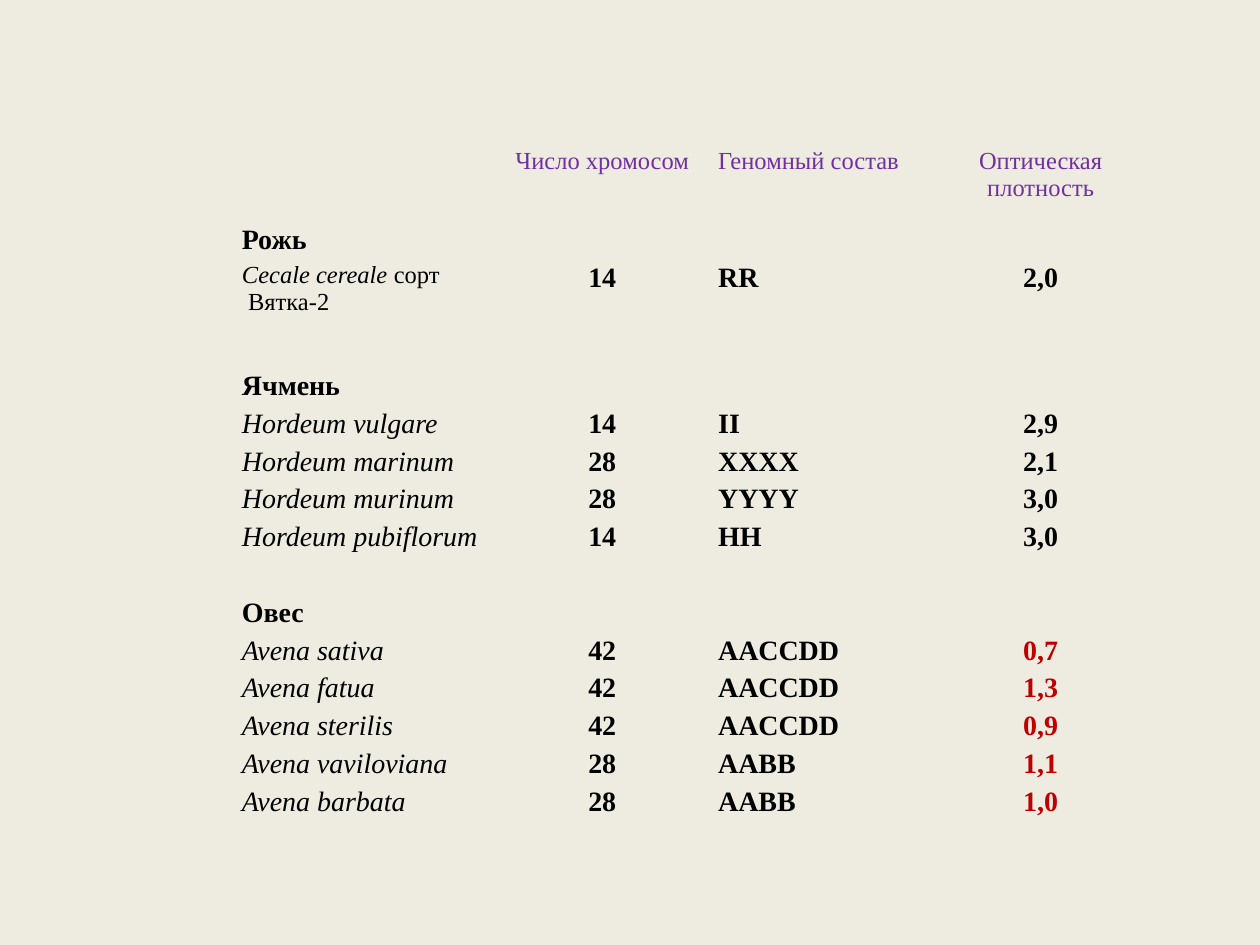
from dataclasses import dataclass
from typing import NamedTuple

from lxml import etree
from pptx import Presentation
from pptx.dml.color import RGBColor
from pptx.enum.text import PP_ALIGN
from pptx.oxml.ns import qn
from pptx.util import Inches, Pt

LEFT, CENTER, JUSTIFY = PP_ALIGN.LEFT, PP_ALIGN.CENTER, PP_ALIGN.JUSTIFY
NO_STYLE = "{2D5ABB26-0587-4C30-8999-92F81FD0307C}"


@dataclass(frozen=True)
class Theme:
    font: str = "Times New Roman"
    background: str = "EEECE1"
    heading: str = "7030A0"
    text: str = "000000"
    low_density: str = "C00000"
    small: int = 14
    body: int = 16


class Span(NamedTuple):
    text: str
    size: int
    color: str
    bold: bool = False
    italic: bool = False


class Species(NamedTuple):
    name: str
    chromosomes: str
    genome: str
    density: str


THEME = Theme()
SLIDE_WIDTH, SLIDE_HEIGHT = 10, 7.5
TABLE_LEFT, TABLE_TOP = 1.87, 1.17
COLUMN_WIDTHS = (2.04, 1.74, 1.74, 1.74)
COLUMN_ALIGNS = (JUSTIFY, CENTER, LEFT, CENTER)
ROW_HEIGHT = 0.3
TALL_ROW = 0.61
GAP_ROW = 0.25
SIDE_INSET = 0.05

HEADINGS = ("", "Число хромосом", "Геномный состав", "Оптическая плотность")
RYE = Species("", "14", "RR", "2,0")
BARLEY = (
    Species("Hordeum vulgare", "14", "II", "2,9"),
    Species("Hordeum marinum", "28", "XXXX", "2,1"),
    Species("Hordeum murinum", "28", "YYYY", "3,0"),
    Species("Hordeum pubiflorum", "14", "HH", "3,0"),
)
OATS = (
    Species("Avena sativa", "42", "AACCDD", "0,7"),
    Species("Avena fatua", "42", "AACCDD", "1,3"),
    Species("Avena sterilis", "42", "AACCDD", "0,9"),
    Species("Avena vaviloviana", "28", "AABB", "1,1"),
    Species("Avena barbata", "28", "AABB", "1,0"),
)

Lines = list[list[Span]]


class Row(NamedTuple):
    cells: list[Lines]
    height: float = ROW_HEIGHT


def heading_row() -> Row:
    cells = [[[Span(text, THEME.small, THEME.heading)]] if text else []
             for text in HEADINGS]
    return Row(cells, TALL_ROW)


def group_row(name: str) -> Row:
    return Row([[[Span(name, THEME.body, THEME.text, bold=True)]], [], [], []])


def empty_row(height: float = ROW_HEIGHT) -> Row:
    return Row([[], [], [], []], height)


def value_cells(species: Species, density_color: str) -> list[Lines]:
    values = ((species.chromosomes, THEME.text), (species.genome, THEME.text),
              (species.density, density_color))
    return [[[Span(text, THEME.body, color, bold=True)]] for text, color in values]


def species_row(species: Species, density_color: str) -> Row:
    name = Span(species.name, THEME.body, THEME.text, italic=True)
    return Row([[[name]], *value_cells(species, density_color)])


def rye_row() -> Row:
    name = [
        [Span("Cecale cereale ", THEME.small, THEME.text, italic=True),
         Span("сорт", THEME.small, THEME.text)],
        [Span(" Вятка-2", THEME.small, THEME.text)],
    ]
    return Row([name, *value_cells(RYE, THEME.text)], TALL_ROW)


def fill_cell(cell, lines: Lines, align: PP_ALIGN) -> None:
    cell.fill.background()
    cell.margin_left = cell.margin_right = Inches(SIDE_INSET)
    cell.margin_top = cell.margin_bottom = 0
    frame = cell.text_frame
    if not lines:
        # A small end mark keeps an empty row from growing.
        end_mark = etree.SubElement(frame.paragraphs[0]._p, qn("a:endParaRPr"))
        end_mark.set("sz", str(THEME.small * 100))
    for index, line in enumerate(lines):
        para = frame.add_paragraph() if index else frame.paragraphs[0]
        para.alignment = align
        for span in line:
            run = para.add_run()
            run.text = span.text
            font = run.font
            font.name = THEME.font
            font.size = Pt(span.size)
            font.bold, font.italic = span.bold, span.italic
            font.color.rgb = RGBColor.from_string(span.color)


def draw_table(page, rows: list[Row]) -> None:
    frame = page.shapes.add_table(
        len(rows), len(COLUMN_WIDTHS), Inches(TABLE_LEFT), Inches(TABLE_TOP),
        Inches(sum(COLUMN_WIDTHS)), Inches(sum(row.height for row in rows)))
    table = frame.table
    table.first_row = table.horz_banding = False
    table._tbl.tblPr.find(qn("a:tableStyleId")).text = NO_STYLE
    for column, width in zip(table.columns, COLUMN_WIDTHS):
        column.width = Inches(width)
    for table_row, row in zip(table.rows, rows):
        table_row.height = Inches(row.height)
        for cell, lines, align in zip(table_row.cells, row.cells, COLUMN_ALIGNS):
            fill_cell(cell, lines, align)


def main() -> None:
    deck = Presentation()
    deck.slide_width, deck.slide_height = Inches(SLIDE_WIDTH), Inches(SLIDE_HEIGHT)
    page = deck.slides.add_slide(deck.slide_layouts[6])
    page.background.fill.solid()
    page.background.fill.fore_color.rgb = RGBColor.from_string(THEME.background)
    draw_table(page, [
        heading_row(),
        group_row("Рожь"),
        rye_row(),
        empty_row(GAP_ROW),
        group_row("Ячмень"),
        *(species_row(species, THEME.text) for species in BARLEY),
        empty_row(),
        group_row("Овес"),
        *(species_row(species, THEME.low_density) for species in OATS),
    ])
    deck.save("out.pptx")


if __name__ == "__main__":
    main()
